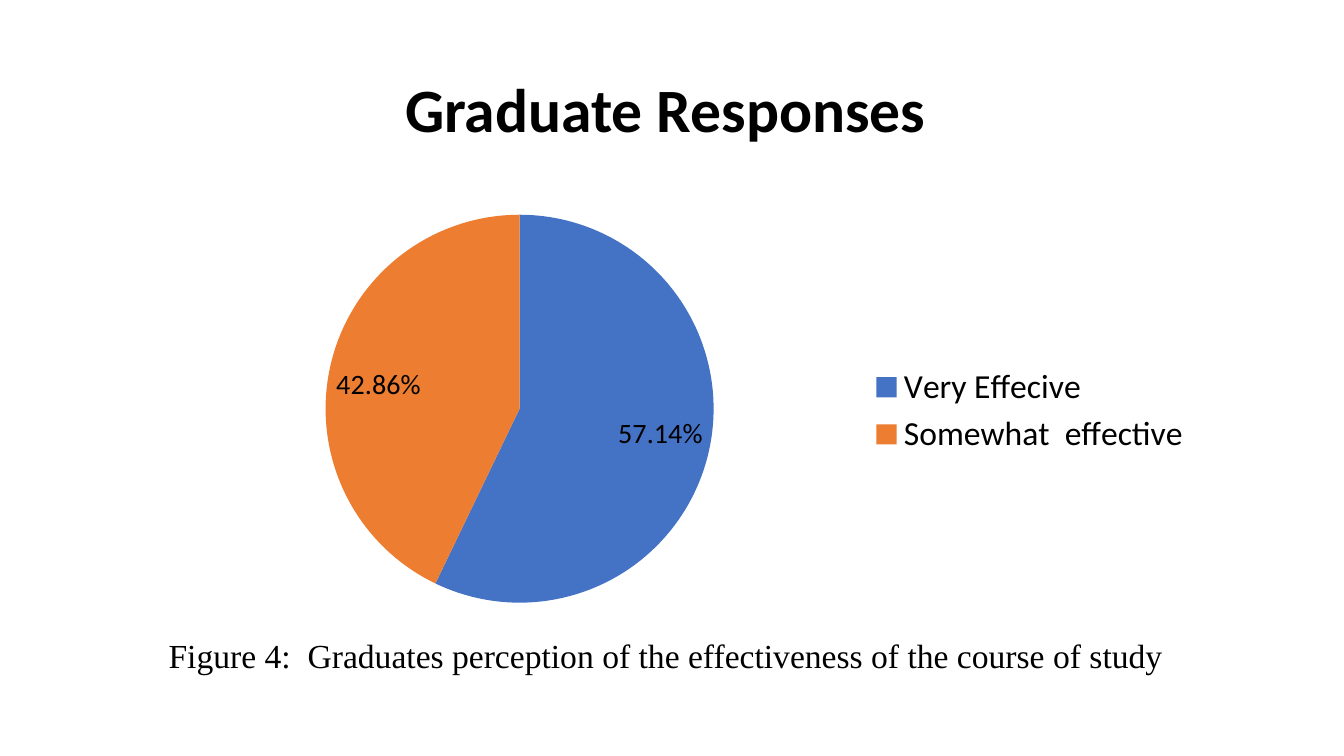
from dataclasses import dataclass

from lxml import etree
from pptx import Presentation
from pptx import util as u
from pptx.chart import data as cd
from pptx.dml import color as col
from pptx.enum import chart as ch, text as tx
from pptx.oxml import ns


@dataclass(frozen=True)
class Theme:
    """Colours, fonts and type sizes."""
    ink: str = "000000"
    hues: tuple = ("4472C4", "ED7D31")
    sans: str = "Calibri"
    serif: str = "Times New Roman"
    head: int = 44
    body: int = 24
    label: int = 20


class Deck:
    """Builds a slide from boxes given as shares of its size."""

    def __init__(self, theme, wide=13.33, high=7.5):
        """Open a deck with one title-only slide."""
        self.theme = theme
        self.prs = Presentation()
        self.prs.slide_width = u.Inches(wide)
        self.prs.slide_height = u.Inches(high)
        self.slide = self.prs.slides.add_slide(self.prs.slide_layouts[5])

    def place(self, left, top, wide, high):
        """Turn shares of the slide into lengths."""
        w, h = self.prs.slide_width, self.prs.slide_height
        return int(left * w), int(top * h), int(wide * w), int(high * h)

    def style(self, font, size, name=None, bold=False):
        """Set a font from the theme."""
        font.size, font.bold = u.Pt(size), bold
        font.name = name or self.theme.sans
        font.color.rgb = col.RGBColor.from_string(self.theme.ink)

    def label(self, shape, words, align, size, name=None, bold=False):
        """Fill a shape with one styled paragraph."""
        frame = shape.text_frame
        frame.word_wrap = True
        frame.vertical_anchor = tx.MSO_ANCHOR.MIDDLE
        para = frame.paragraphs[0]
        para.text, para.alignment = words, align
        self.style(para.font, size, name, bold)
        return para

    def title(self, words, box):
        """Move and format the title placeholder."""
        shape = self.slide.shapes.title
        shape.left, shape.top, shape.width, shape.height = self.place(*box)
        para = self.label(shape, words, tx.PP_ALIGN.CENTER, self.theme.head, bold=True)
        para.line_spacing = 0.9

    def note(self, words, box):
        """Add a caption."""
        shape = self.slide.shapes.add_textbox(*self.place(*box))
        self.label(shape, words, tx.PP_ALIGN.LEFT, self.theme.body, self.theme.serif)

    def fix(self, part, spot, box, inner=False):
        """Pin a chart part to shares of the chart."""
        for old in part.findall(ns.qn("c:layout")):
            part.remove(old)
        layout = etree.Element(ns.qn("c:layout"))
        manual = etree.SubElement(layout, ns.qn("c:manualLayout"))
        pairs = [("layoutTarget", "inner")] if inner else []
        pairs += [("xMode", "edge"), ("yMode", "edge"), *zip("xywh", box)]
        for tag, val in pairs:
            etree.SubElement(manual, ns.qn("c:" + tag)).set("val", str(val))
        part.insert(spot, layout)

    def pie(self, shares, box, plot, key):
        """Add a pie with labels and a legend."""
        data = cd.CategoryChartData(number_format="0.00%")
        data.categories = list(shares)
        data.add_series("Series 1", list(shares.values()))
        chart = self.slide.shapes.add_chart(
            ch.XL_CHART_TYPE.PIE, *self.place(*box), data).chart
        self.style(chart.font, 10)
        chart.has_title = False
        chart.has_legend = True
        chart.legend.position = ch.XL_LEGEND_POSITION.RIGHT
        chart.legend.include_in_layout = False
        self.style(chart.legend.font, self.theme.body)
        pie = chart.plots[0]
        pie.vary_by_categories = True
        for i, hue in enumerate(self.theme.hues):
            fill = pie.series[0].points[i].format.fill
            fill.solid()
            fill.fore_color.rgb = col.RGBColor.from_string(hue)
        labels = pie.series[0].data_labels
        labels.show_value = True
        labels.show_percentage = False
        labels.number_format = "0.00%"
        labels.number_format_is_linked = False
        labels.position = ch.XL_LABEL_POSITION.INSIDE_END
        self.style(labels.font, self.theme.label)
        root = chart.element
        self.fix(root.find(".//" + ns.qn("c:plotArea")), 0, plot, True)
        self.fix(root.find(".//" + ns.qn("c:legend")), 1, key)


def main():
    """Build and save the slide."""
    deck = Deck(Theme())
    deck.title("Graduate Responses ", (0.069, 0.053, 0.863, 0.193))
    deck.pie({"Very Effecive": 0.5714, "Somewhat  effective": 0.4286},
             (0.069, 0.267, 0.825, 0.553),
             plot=(0.21, 0.03, 0.35, 0.93), key=(0.7, 0.38, 0.29, 0.24))
    deck.note("Figure 4:  Graduates perception of the effectiveness of the course of study",
              (0.118, 0.833, 0.781, 0.067))
    deck.prs.save("out.pptx")


if __name__ == "__main__":
    main()
